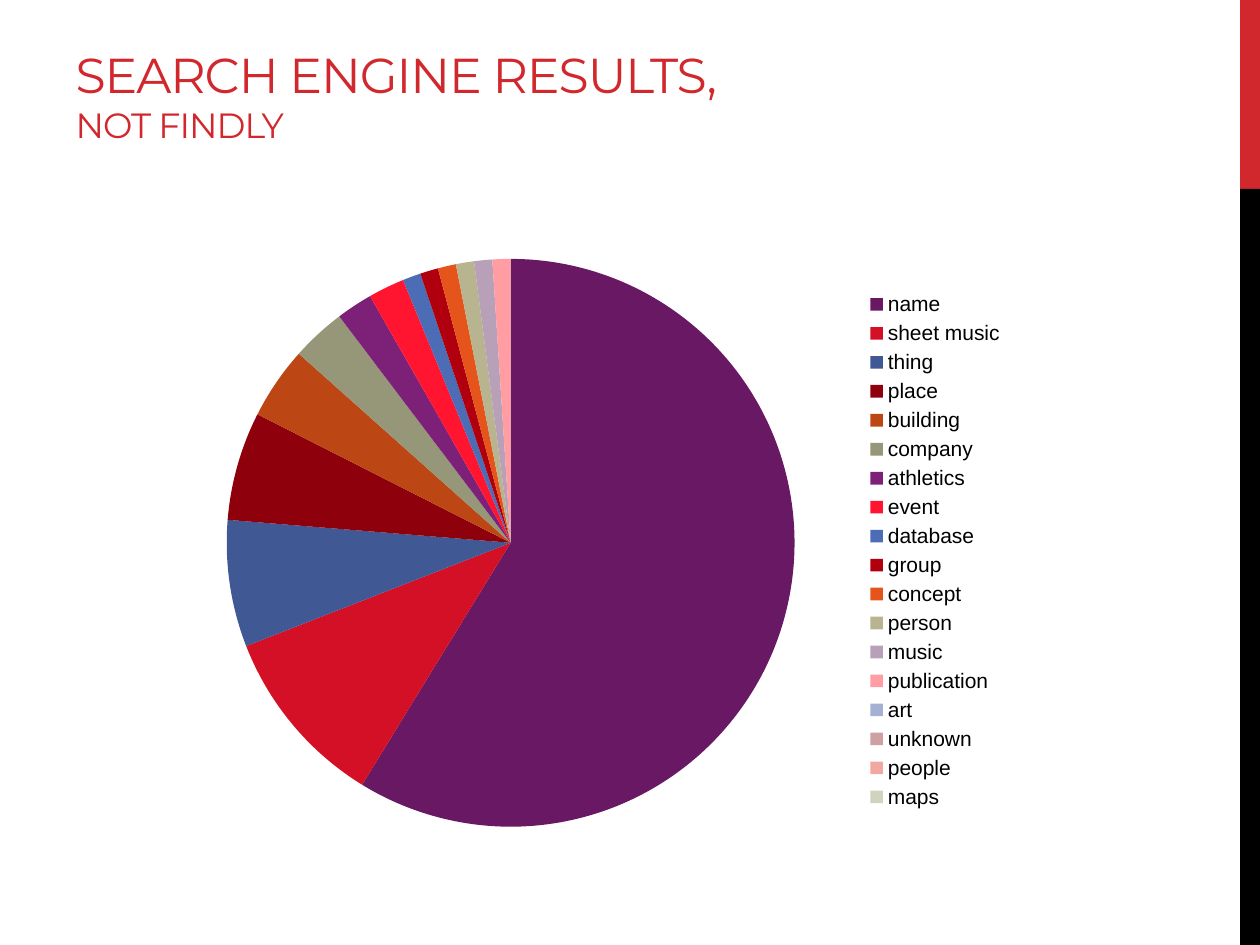
from lxml.etree import SubElement
from pptx import Presentation
from pptx.chart.data import CategoryChartData
from pptx.dml.color import RGBColor
from pptx.enum.chart import XL_CHART_TYPE, XL_LEGEND_POSITION
from pptx.enum.shapes import MSO_SHAPE
from pptx.enum.text import MSO_ANCHOR, MSO_AUTO_SIZE, PP_ALIGN
from pptx.oxml.ns import qn
from pptx.util import Cm, Pt

RESULTS = [
    ("name", 57, "691863"), ("sheet music", 10, "D41027"),
    ("thing", 7, "405894"), ("place", 6, "8F000D"),
    ("building", 4, "BD4714"), ("company", 3, "969678"),
    ("athletics", 2, "7D2077"), ("event", 2, "FF1530"),
    ("database", 1, "4C6CB5"), ("group", 1, "B0000E"),
    ("concept", 1, "E5551B"), ("person", 1, "B7B48F"),
    ("music", 1, "B8A0B8"), ("publication", 1, "FF9DA2"),
    ("art", 0, "A5B0D5"), ("unknown", 0, "CFA0A2"),
    ("people", 0, "F0A8A0"), ("maps", 0, "D2D3BF"),
]
SERIES_NAMES = ["Series 1", "Series 2", "Series 3"]


def color(value):
    return RGBColor.from_string(value)


def add_text(para, text, size, font, fill, spacing=0):
    span = para.add_run()
    span.text = text
    span.font.size = Pt(size)
    span.font.name = font
    span.font.color.rgb = color(fill)
    span.font._element.set("spc", str(spacing))


def place(element, successors, percentages, inner=False):
    for old in element.findall(qn("c:layout")):
        element.remove(old)
    layout = SubElement(element, qn("c:layout"))
    manual = SubElement(layout, qn("c:manualLayout"))
    settings = [("layoutTarget", "inner")] if inner else []
    settings += [("xMode", "edge"), ("yMode", "edge")]
    settings += [(name, value / 100) for name, value in zip("xywh", percentages)]
    for name, value in settings:
        SubElement(manual, qn(f"c:{name}")).set("val", str(value))
    for child in element:
        if child.tag in [qn(f"c:{name}") for name in successors]:
            child.addprevious(layout)
            break


class SlideBuilder:
    accent = "D1282E"
    dark = "000000"
    title_font = "Montserrat"
    chart_font = "Arial"

    def __init__(self, page):
        self.page = page

    def bar(self, top, height, fill):
        box = self.page.shapes.add_shape(
            MSO_SHAPE.RECTANGLE, Cm(25), Cm(top), Cm(0.4), Cm(height))
        box.shadow.inherit = False
        box.fill.solid()
        box.fill.fore_color.rgb = color(fill)
        box.line.fill.background()

    def title(self, heading, detail):
        box = self.page.shapes.title
        box.left, box.top, box.width, box.height = Cm(1.27), Cm(0.43), Cm(21.82), Cm(3.81)
        frame = box.text_frame
        frame.auto_size = MSO_AUTO_SIZE.NONE
        frame.vertical_anchor = MSO_ANCHOR.BOTTOM
        frame.margin_bottom = Cm(1.31)
        para = frame.paragraphs[0]
        para.alignment = PP_ALIGN.LEFT
        add_text(para, heading, 28, self.title_font, self.accent, spacing=-60)
        para.add_line_break()
        add_text(para, detail, 20, self.title_font, self.accent, spacing=-60)

    def pie(self, results):
        names, values, fills = zip(*results)
        data = CategoryChartData()
        data.categories = names
        for series_name in SERIES_NAMES:
            data.add_series(series_name, values)
        chart = self.page.shapes.add_chart(
            XL_CHART_TYPE.PIE, Cm(1.27), Cm(4.88), Cm(21.16), Cm(12.14), data).chart
        chart.replace_data(data)
        chart.has_title = False
        chart.font.size = Pt(10)
        chart.font.name = self.chart_font
        chart.font.color.rgb = color(self.dark)
        plot = chart.plots[0]
        plot.vary_by_categories = True
        for series in plot.series:
            for index, fill in enumerate(fills):
                slice_format = series.points[index].format
                slice_format.fill.solid()
                slice_format.fill.fore_color.rgb = color(fill)
                slice_format.line.fill.background()
        chart.has_legend = True
        legend = chart.legend
        legend.position = XL_LEGEND_POSITION.RIGHT
        legend.include_in_layout = False
        legend.font.size = Pt(12)
        legend.font.name = self.chart_font
        legend.font.color.rgb = color(self.dark)
        place(legend._element, ["overlay", "spPr", "txPr"], (75.6, 7.4, 15, 87.8))
        place(plot._element.getparent(), ["pieChart"], (15.6, 2.8, 54.1, 94.3), inner=True)


def main():
    deck = Presentation()
    deck.slide_width, deck.slide_height = Cm(25.4), Cm(19.05)
    builder = SlideBuilder(deck.slides.add_slide(deck.slide_layouts[5]))
    builder.bar(0, 3.81, builder.accent)
    builder.bar(3.81, 15.24, builder.dark)
    builder.title("SEARCH ENGINE RESULTS,", "NOT FINDLY")
    builder.pie(RESULTS)
    deck.save("out.pptx")


if __name__ == "__main__":
    main()
